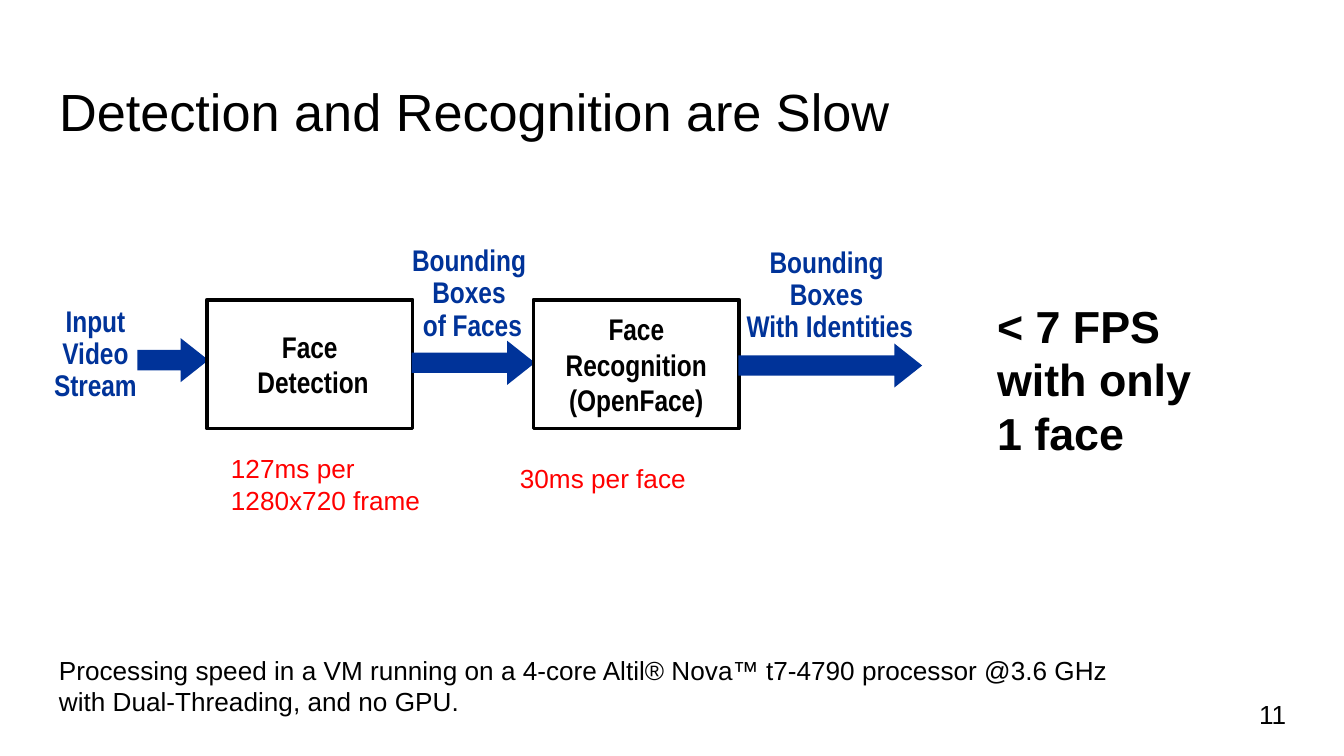
from lxml.etree import SubElement
from pptx import Presentation
from pptx.dml.color import RGBColor
from pptx.enum.shapes import MSO_SHAPE
from pptx.enum.text import MSO_ANCHOR, MSO_AUTO_SIZE, PP_ALIGN
from pptx.oxml.ns import qn
from pptx.util import Inches, Pt

COLORS = {"ink": "000000", "flow": "003399", "timing": "FF0000", "paper": "FFFFFF"}
CELL = 0.1  # side of a grid cell in inches: 100 columns on the slide
STAGE_WIDTH, STAGE_HEIGHT, STAGE_TOP = 15.3, 9.6, 22.3
ARROW_HEIGHT = 3


def grid(*cells):
    return [Inches(cell * CELL) for cell in cells]


def color(name):
    return RGBColor.from_string(COLORS[name])


def write(text_frame, text, size, ink="ink", font="Arial", bold=False,
          align=PP_ALIGN.LEFT, spacing=None):
    """Fill a text frame, one paragraph per line, and format its runs."""
    text_frame.text = text
    for paragraph in text_frame.paragraphs:
        paragraph.alignment = align
        if spacing:
            paragraph.line_spacing = spacing
        for run in paragraph.runs:
            run.font.name = font
            run.font.size = Pt(size)
            run.font.bold = bold
            run.font.color.rgb = color(ink)


def set_margins(text_frame, margin):
    text_frame.margin_left = text_frame.margin_right = margin
    text_frame.margin_top = text_frame.margin_bottom = margin


def add_title(slide, text):
    title = slide.shapes.title
    title.left, title.top, title.width, title.height = grid(3.4, 4.9, 93.2, 6.3)
    title.text_frame.auto_size = MSO_AUTO_SIZE.NONE
    title.text_frame.vertical_anchor = MSO_ANCHOR.TOP
    set_margins(title.text_frame, Inches(0.1))
    write(title.text_frame, text, 28)


def add_text(slide, box, text, size, wrap=True, **style):
    text_frame = slide.shapes.add_textbox(*grid(*box)).text_frame
    text_frame.word_wrap = wrap
    write(text_frame, text, size, **style)
    return text_frame


def add_flow_label(slide, box, text):
    text_frame = add_text(slide, box, text, 16, wrap=False, ink="flow",
                          font="Arial Narrow", bold=True,
                          align=PP_ALIGN.CENTER, spacing=0.9)
    set_margins(text_frame, 0)


def add_block(slide, preset, box, fill, line, line_width):
    shape = slide.shapes.add_shape(preset, *grid(*box))
    shape.shadow.inherit = False
    shape.fill.solid()
    shape.fill.fore_color.rgb = color(fill)
    shape.line.color.rgb = color(line)
    shape.line.width = Pt(line_width)
    return shape


def add_stage(slide, left, text):
    box = (left, STAGE_TOP, STAGE_WIDTH, STAGE_HEIGHT)
    stage = add_block(slide, MSO_SHAPE.RECTANGLE, box, "paper", "ink", 2)
    stage.text_frame.word_wrap = True
    stage.text_frame.vertical_anchor = MSO_ANCHOR.MIDDLE
    write(stage.text_frame, text, 16, font="Arial Narrow", bold=True,
          align=PP_ALIGN.CENTER)


def add_flow_arrow(slide, start, end, top):
    """Draw a block arrow with sharp, mitred corners."""
    arrow = add_block(slide, MSO_SHAPE.RIGHT_ARROW,
                      (start, top, end - start, ARROW_HEIGHT), "flow", "flow", 1)
    arrow.adjustments[0] = 0.46
    arrow.adjustments[1] = 0.63
    outline = arrow.element.spPr.find(qn("a:ln"))
    SubElement(outline, qn("a:miter"), lim="800000")


def add_pipeline(slide):
    detection, recognition = 15.4, 39.7
    add_flow_arrow(slide, 10.3, detection, 25.3)
    add_stage(slide, detection, "Face\n Detection")
    add_flow_arrow(slide, detection + STAGE_WIDTH, recognition, 25.5)
    add_stage(slide, recognition, "Face Recognition\n(OpenFace)")
    add_flow_arrow(slide, recognition + STAGE_WIDTH, 68.5, 25.7)

    add_flow_label(slide, (4, 22.8, 6.2, 7.2), "Input\nVideo\nStream")
    add_flow_label(slide, (30.6, 18.3, 9.1, 7.3), "Bounding \nBoxes \nof Faces")
    add_flow_label(slide, (55.5, 18.4, 12.5, 7.3), "Bounding \nBoxes \nWith Identities")


def main():
    presentation = Presentation()
    presentation.slide_width, presentation.slide_height = grid(100, 56.25)
    slide = presentation.slides.add_slide(presentation.slide_layouts[5])

    add_title(slide, "Detection and Recognition are Slow")
    add_text(slide, (37.7, 33.9, 15.5, 3.4), "30ms per face", 14, ink="timing")
    add_text(slide, (16.2, 33.2, 16.1, 5.7), "127ms per\n1280x720 frame", 14,
             wrap=False, ink="timing")
    add_text(slide, (3.4, 48.2, 80.4, 5.7),
             "Processing speed in a VM running on a 4-core Altil® Nova™ t7-4790 "
             "processor @3.6 GHz with Dual-Threading, and no GPU.", 14)
    add_pipeline(slide)
    add_text(slide, (73.2, 21.7, 17.1, 13.1), "< 7 FPS\nwith only 1 face", 24,
             bold=True)

    number = add_text(slide, (92.7, 51, 6, 4.3), "11", 14)
    number.vertical_anchor = MSO_ANCHOR.MIDDLE
    set_margins(number, Inches(0.1))

    presentation.save("out.pptx")


if __name__ == "__main__":
    main()
